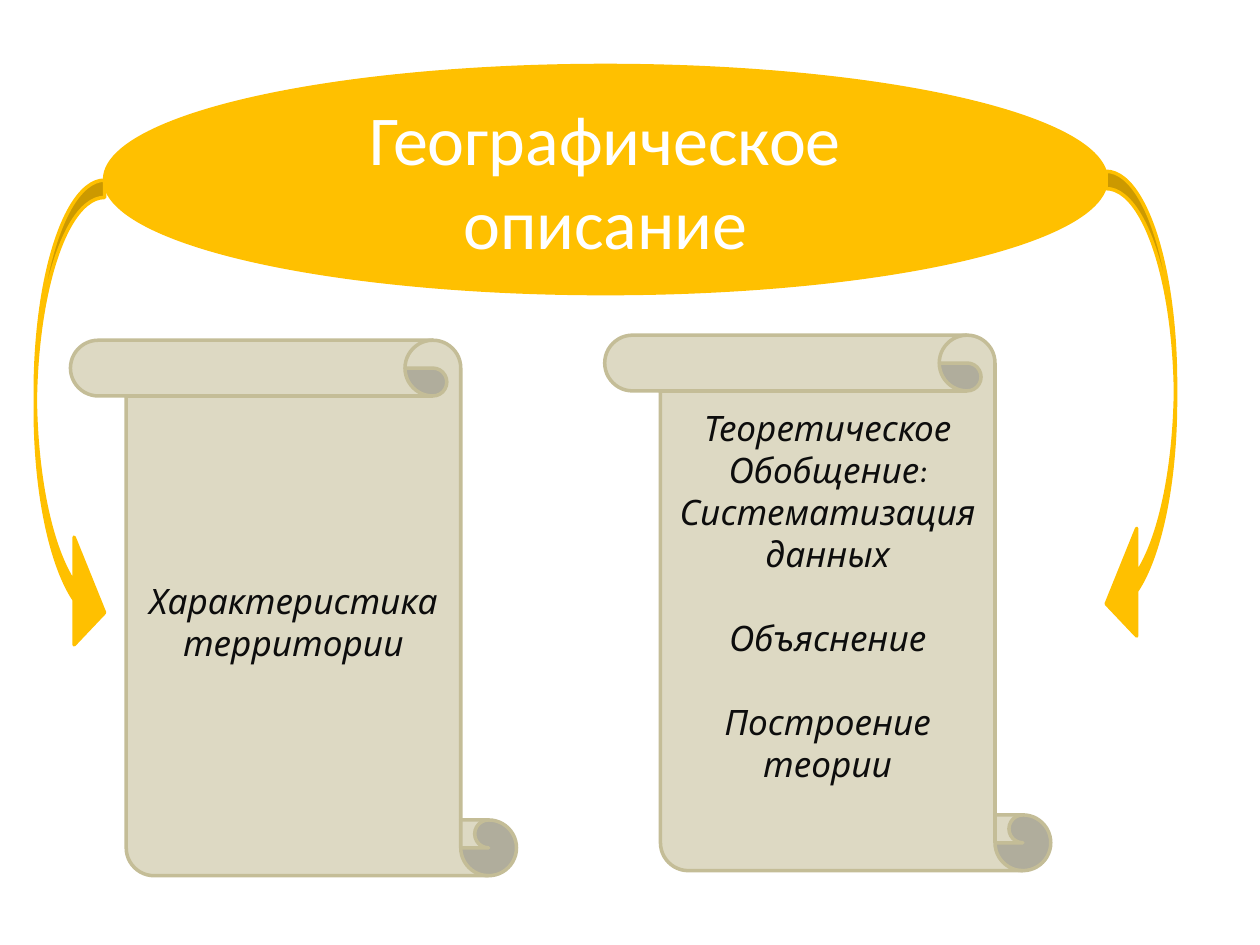
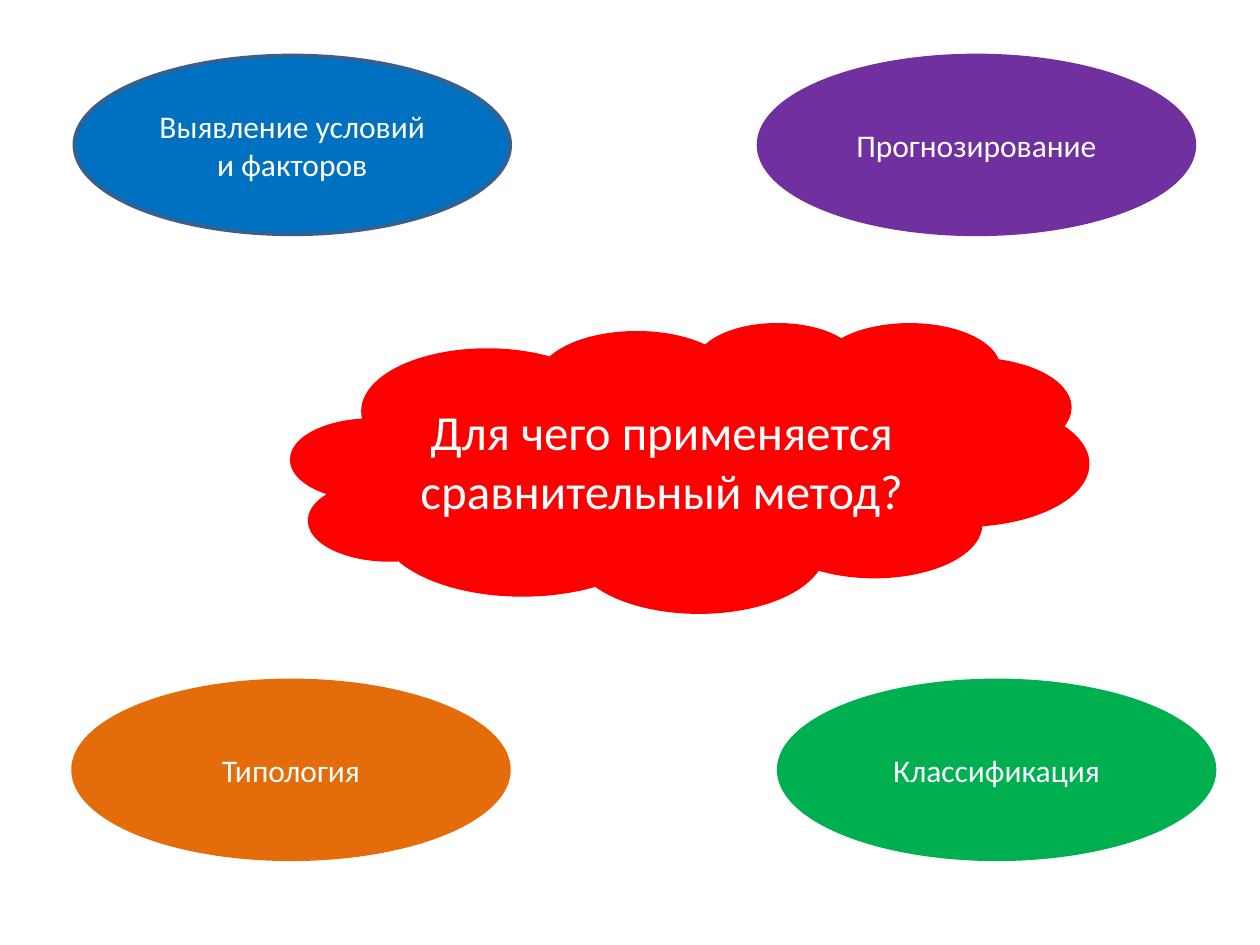
from pptx import Presentation
from pptx import util as u
from pptx.dml.color import RGBColor
from pptx.enum import shapes, text

COLORS = {
    "white": "FFFFFF", "ink": "0D0D0D", "gold": "FFC000",
    "parchment": "DDD9C3", "parchment edge": "C4BD97",
    "red": "FF0000", "blue": "0070C0", "blue edge": "3A5F8C",
    "orange": "E46C0A", "green": "00B050", "purple": "7030A0",
}
KINDS = shapes.MSO_SHAPE

HEADING = "Географическое описание"
# Each scroll: left, top, and groups of lines set apart by one empty line.
SCROLLS = [
    (0.56, 2.70, [["Характеристика", "территории"]]),
    (4.80, 2.66, [["Теоретическое", "Обобщение:", "Систематизация", "данных"],
                  ["Объяснение"], ["Построение", "теории"]]),
]
SCROLL_SIZE = (3.54, 4.25)
GROUP_GAP = u.Pt(24)
# Each arrow: left, top, mirrored.
ARROWS = [(0.28, 1.43, False), (8.78, 1.36, True)]
ARROW_SIZE = (0.55, 3.86)
ARROW_ADJUSTMENTS = (0.25, 1.553, 0.44)

QUESTION = "Для чего применяется сравнительный метод?"
# Each purpose: label, left, top, fill, edge.
PURPOSES = [
    ("Выявление условий и факторов", 0.59, 0.44, "blue", "blue edge"),
    ("Типология", 0.58, 5.40, "orange", "orange"),
    ("Классификация", 6.18, 5.40, "green", "green"),
    ("Прогнозирование", 6.02, 0.44, "purple", "purple"),
]
PURPOSE_SIZE = (3.46, 1.42)


def rgb(name):
    return RGBColor.from_string(COLORS[name])


def add_figure(slide, kind, place, size, fill, edge=None, mirrored=False):
    figure = slide.shapes.add_shape(kind, *map(u.Inches, place + size))
    figure.shadow.inherit = False
    figure.fill.solid()
    figure.fill.fore_color.rgb = rgb(fill)
    figure.line.color.rgb = rgb(edge or fill)
    figure.line.width = u.Pt(2)
    if mirrored:
        figure.element.spPr.xfrm.set("flipH", "1")
    return figure


def write(figure, groups, points, font="Calibri", color="white", italic=False):
    """Centre the groups of lines in the figure, with a gap between groups."""
    frame = figure.text_frame
    frame.word_wrap = True
    frame.vertical_anchor = text.MSO_ANCHOR.MIDDLE
    lines = [(line, group_no > 0 and line_no == 0)
             for group_no, group in enumerate(groups)
             for line_no, line in enumerate(group)]
    for number, (line, opens_group) in enumerate(lines):
        para = frame.add_paragraph() if number else frame.paragraphs[0]
        para.text = line
        para.alignment = text.PP_ALIGN.CENTER
        if opens_group:
            para.space_before = GROUP_GAP
        para.font.name = font
        para.font.size = u.Pt(points)
        para.font.italic = italic
        para.font.color.rgb = rgb(color)


def build_description(slide):
    heading = add_figure(slide, KINDS.OVAL, (0.83, 0.52), (7.95, 1.81), "gold")
    write(heading, [[HEADING]], 40)
    for left, top, mirrored in ARROWS:
        arrow = add_figure(slide, KINDS.CURVED_RIGHT_ARROW, (left, top),
                           ARROW_SIZE, "gold", mirrored=mirrored)
        for index, value in enumerate(ARROW_ADJUSTMENTS):
            arrow.adjustments[index] = value
    for left, top, groups in SCROLLS:
        scroll = add_figure(slide, KINDS.VERTICAL_SCROLL, (left, top), SCROLL_SIZE,
                            "parchment", "parchment edge", mirrored=True)
        write(scroll, groups, 20, "Karla", "ink", italic=True)
        if len(groups) > 1:
            scroll.text_frame.margin_bottom += GROUP_GAP


def build_purposes(slide):
    cloud = add_figure(slide, KINDS.CLOUD, (2.32, 2.57), (6.31, 2.28), "red")
    write(cloud, [[QUESTION]], 28)
    for label, left, top, fill, edge in PURPOSES:
        oval = add_figure(slide, KINDS.OVAL, (left, top), PURPOSE_SIZE, fill, edge)
        write(oval, [[label]], 18)


def main():
    deck = Presentation()
    deck.slide_width, deck.slide_height = u.Inches(10), u.Inches(7.5)
    blank = deck.slide_layouts.get_by_name("Blank")
    for build in (build_description, build_purposes):
        build(deck.slides.add_slide(blank))
    deck.save("out.pptx")


if __name__ == "__main__":
    main()
